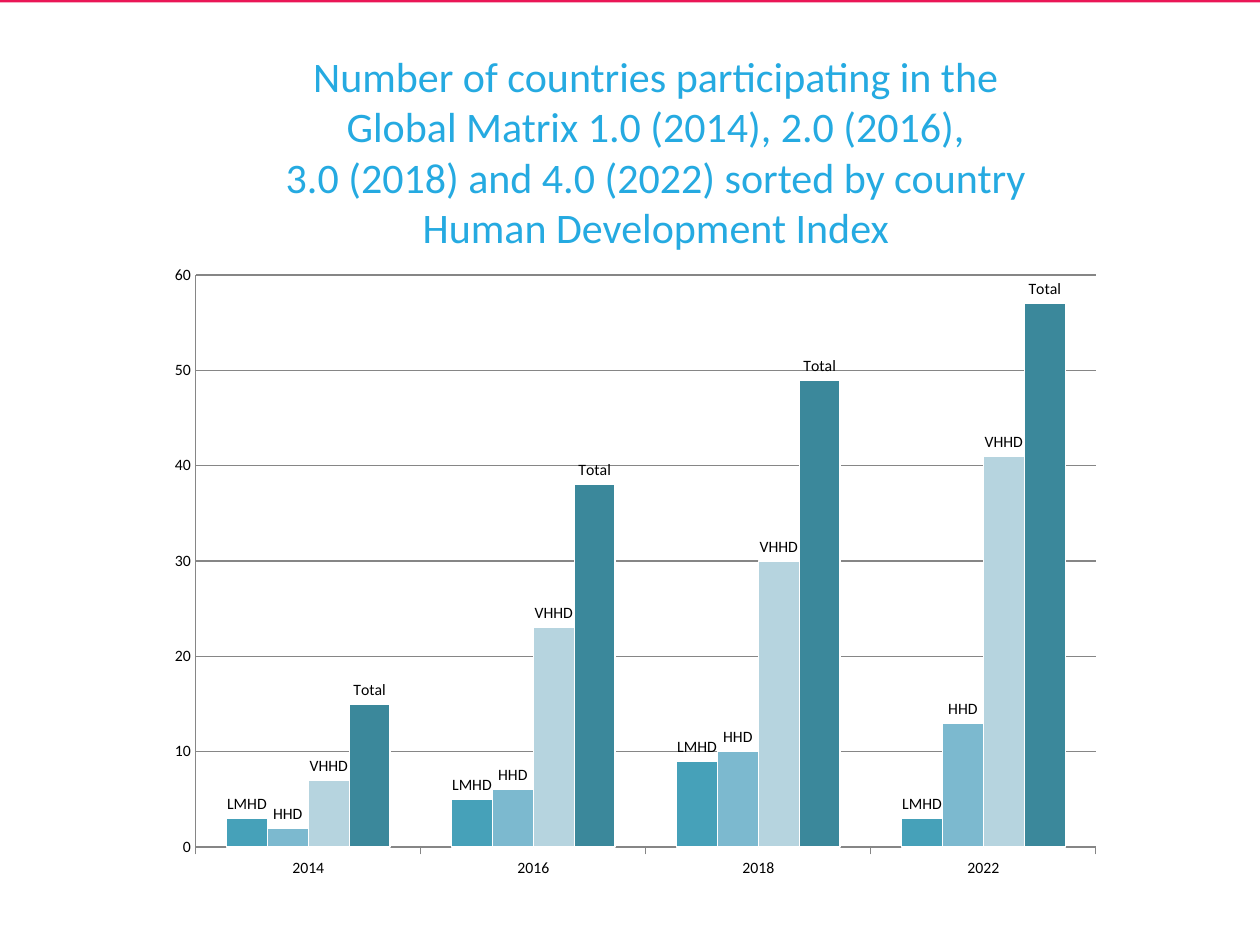
from lxml import etree
from pptx import Presentation
from pptx.chart.data import CategoryChartData
from pptx.dml.color import RGBColor
from pptx.enum.chart import XL_CHART_TYPE, XL_LABEL_POSITION as LabelPos, XL_TICK_MARK as Tick
from pptx.enum.shapes import MSO_SHAPE
from pptx.enum.text import MSO_ANCHOR, MSO_AUTO_SIZE, PP_ALIGN
from pptx.oxml.ns import qn
from pptx.util import Inches, Pt

# Content
FONT = "Calibri"
TITLE = [
    "Number of countries participating in the",
    "Global Matrix 1.0 (2014), 2.0 (2016),",
    "3.0 (2018) and 4.0 (2022) sorted by country",
    "Human Development Index",
]
YEARS = ["2014", "2016", "2018", "2022"]
# Series name, bar label, bar colour, values
GROUPS = [
    ("LMIC", "LMHD", "46A1B9", (3, 5, 9, 3)),
    ("HIC", "HHD", "7CB9CF", (2, 6, 10, 13)),
    ("VHIC", "VHHD", "B6D4DF", (7, 23, 30, 41)),
    ("Total", "Total", "3B889B", (15, 38, 49, 57)),
]
PLOT_AREA = {"x": 0.04, "y": 0.02, "w": 0.94, "h": 0.88}


def rgb(value):
    return RGBColor.from_string(value)


def set_font(font, size, color):
    font.name, font.size, font.bold = FONT, Pt(size), False
    font.color.rgb = rgb(color)


def set_line(line, color, width=0.75):
    line.color.rgb = rgb(color)
    line.width = Pt(width)


def place_plot(chart, area):
    """Fix the inner plot area as fractions of the chart."""
    plot_area = chart.plots[0]._element.getparent()
    for old in plot_area.findall(qn("c:layout")):
        plot_area.remove(old)
    layout = etree.Element(qn("c:layout"))
    plot_area.insert(0, layout)
    manual = etree.SubElement(layout, qn("c:manualLayout"))
    settings = {"layoutTarget": "inner", "xMode": "edge", "yMode": "edge", **area}
    for tag, value in settings.items():
        etree.SubElement(manual, qn(f"c:{tag}")).set("val", str(value))


prs = Presentation()
prs.slide_width, prs.slide_height = Inches(10), Inches(7.5)
s = prs.slides.add_slide(prs.slide_layouts[5])

# Top rule
rule = s.shapes.add_shape(MSO_SHAPE.RECTANGLE, 0, 0, prs.slide_width, Inches(0.02))
rule.shadow.inherit = False
rule.fill.solid()
rule.fill.fore_color.rgb = rgb("EA1656")
rule.line.fill.background()

# Title, raised by one line through its bottom inset
title = s.shapes.title
title.left, title.top = Inches(1.08), Inches(1)
title.width, title.height = Inches(8.25), Inches(0.8)
tf = title.text_frame
tf.auto_size = MSO_AUTO_SIZE.NONE
tf.word_wrap = True
tf.vertical_anchor = MSO_ANCHOR.MIDDLE
tf.margin_bottom = Inches(0.45)
p = tf.paragraphs[0]
p.text = "\v".join(TITLE)
p.alignment = PP_ALIGN.CENTER
set_font(p.font, 24, "25AAE1")

# Chart
data = CategoryChartData()
data.categories = YEARS
for name, _, _, values in GROUPS:
    data.add_series(name, values)
chart = s.shapes.add_chart(XL_CHART_TYPE.COLUMN_CLUSTERED, Inches(1.25), Inches(2.08),
                           Inches(7.6), Inches(5.16), data).chart
chart.has_title = False
chart.has_legend = False
set_font(chart.font, 9, "000000")
place_plot(chart, PLOT_AREA)

# Axes
cat_axis, val_axis = chart.category_axis, chart.value_axis
cat_axis.major_tick_mark = Tick.OUTSIDE
val_axis.major_tick_mark = Tick.NONE
val_axis.minimum_scale, val_axis.maximum_scale, val_axis.major_unit = 0, 60, 10
val_axis.has_major_gridlines = True
for line_owner in (cat_axis, val_axis, val_axis.major_gridlines):
    set_line(line_owner.format.line, "868686")

# Bars and their labels
plot = chart.plots[0]
plot.vary_by_categories = False
plot.gap_width, plot.overlap = 150, 0
for series, (name, label, color, values) in zip(plot.series, GROUPS):
    series.format.fill.solid()
    series.format.fill.fore_color.rgb = rgb(color)
    set_line(series.format.line, "FFFFFF")
    labels = series.data_labels
    labels.show_series_name, labels.show_value = True, False
    labels.position = LabelPos.OUTSIDE_END
    set_font(labels.font, 9, "000000")
    if label != name:
        for i in range(len(values)):
            point_label = series.points[i].data_label
            p = point_label.text_frame.paragraphs[0]
            p.text = label
            set_font(p.font, 9, "000000")
            point_label.position = LabelPos.OUTSIDE_END

prs.save("out.pptx")
